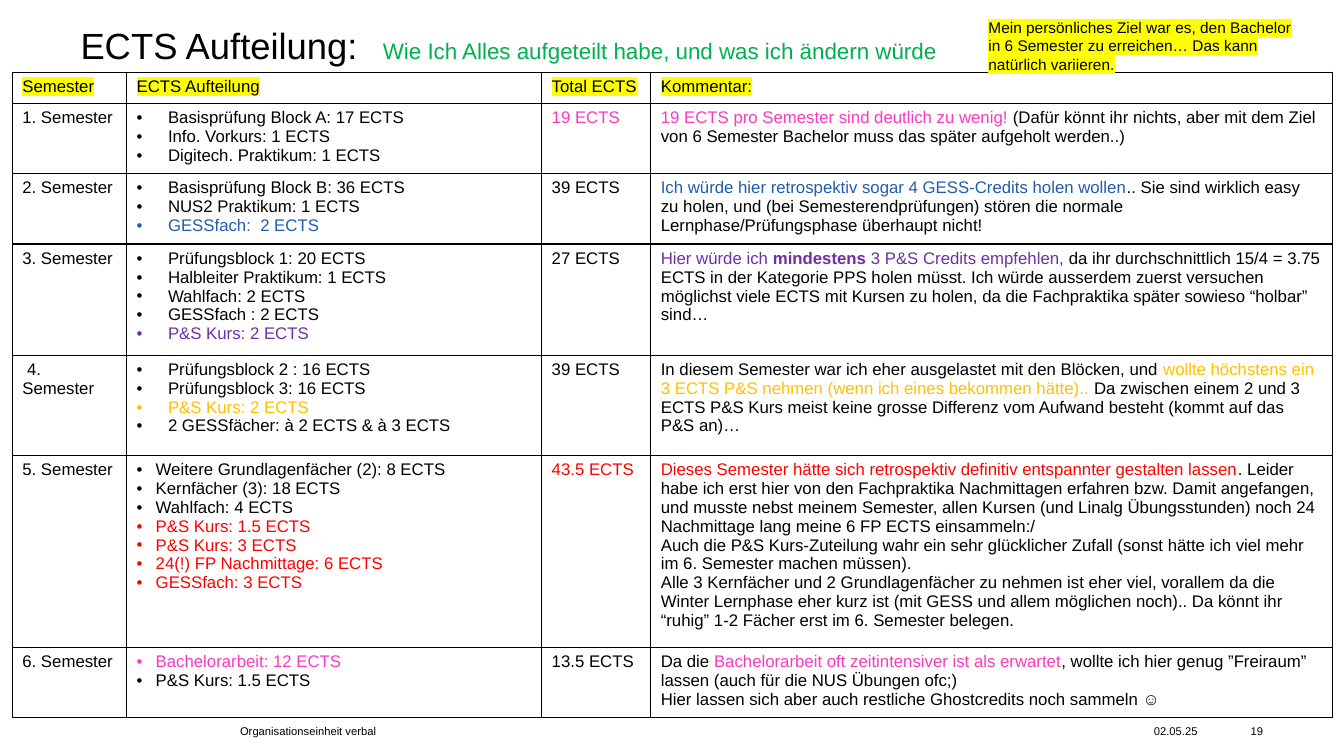
from lxml.etree import SubElement
from pptx import Presentation
from pptx.dml.color import RGBColor
from pptx.enum.text import MSO_ANCHOR, MSO_AUTO_SIZE, PP_ALIGN
from pptx.oxml import parse_xml
from pptx.oxml.ns import nsdecls, qn
from pptx.util import Cm, Pt

BLACK, YELLOW, GREEN = "000000", "FFFF00", "00B050"
PINK, BLUE, PURPLE = "F73BBE", "215CAF", "7030A0"
GOLD, RED = "FFC000", "FF0000"


def add_run(paragraph, text, size, color=BLACK, bold=False, highlight=None):
    run = paragraph.add_run()
    run.text = text
    run.font.size = Pt(size)
    run.font.name = "Arial"
    run.font.bold = bold
    run.font.color.rgb = RGBColor.from_string(color)
    if highlight:
        fill = run.font.fill._xPr.find(qn("a:solidFill"))
        fill.addnext(parse_xml(
            f'<a:highlight {nsdecls("a")}><a:srgbClr val="{highlight}"/></a:highlight>'))


def add_box(left, top, width, height, margin=0):
    box = slide.shapes.add_textbox(Cm(left), Cm(top), Cm(width), Cm(height))
    frame = box.text_frame
    frame.word_wrap = True
    if margin == 0:
        frame.margin_left = frame.margin_right = 0
        frame.margin_top = frame.margin_bottom = 0
    return frame


presentation = Presentation()
presentation.slide_width = Cm(33.87)
presentation.slide_height = Cm(19.05)
slide = presentation.slides.add_slide(presentation.slide_layouts[6])

# Table content: semester, (bullet indent, courses), total, comment paragraphs
headings = ["Semester", "ECTS Aufteilung", "Total ECTS", "Kommentar:"]
WIDE, NARROW = 0.79, 0.48
semesters = [
    ("1. Semester", WIDE,
     [("Basisprüfung Block A: 17 ECTS",), ("Info. Vorkurs: 1 ECTS",),
      ("Digitech. Praktikum: 1 ECTS",)],
     ("19 ECTS", PINK),
     [[("19 ECTS pro Semester sind deutlich zu wenig! ", PINK),
       ("(Dafür könnt ihr nichts, aber mit dem Ziel von 6 Semester Bachelor muss "
        "das später aufgeholt werden..)",)]]),
    ("2. Semester", WIDE,
     [("Basisprüfung Block B: 36 ECTS",), ("NUS2 Praktikum: 1 ECTS",),
      ("GESSfach:  2 ECTS", BLUE)],
     ("39 ECTS",),
     [[("Ich würde hier retrospektiv sogar 4 GESS-Credits holen wollen", BLUE),
       (".. Sie sind wirklich easy zu holen, und (bei Semesterendprüfungen) stören "
        "die normale Lernphase/Prüfungsphase überhaupt nicht!",)]]),
    ("3. Semester", WIDE,
     [("Prüfungsblock 1: 20 ECTS",), ("Halbleiter Praktikum: 1 ECTS",),
      ("Wahlfach: 2 ECTS",), ("GESSfach : 2 ECTS",), ("P&S Kurs: 2 ECTS", PURPLE)],
     ("27 ECTS",),
     [[("Hier würde ich ", PURPLE), ("mindestens ", PURPLE, True),
       ("3 P&S Credits empfehlen, ", PURPLE),
       ("da ihr durchschnittlich 15/4 = 3.75 ECTS in der Kategorie PPS holen müsst. "
        "Ich würde ausserdem zuerst versuchen möglichst viele ECTS mit Kursen zu "
        "holen, da die Fachpraktika später sowieso “holbar” sind…",)]]),
    (" 4. Semester", WIDE,
     [("Prüfungsblock 2 : 16 ECTS",), ("Prüfungsblock 3: 16 ECTS",),
      ("P&S Kurs: 2 ECTS", GOLD), ("2 GESSfächer: à 2 ECTS & à 3 ECTS",)],
     ("39 ECTS",),
     [[("In diesem Semester war ich eher ausgelastet mit den Blöcken, und ",),
       ("wollte höchstens ein 3 ECTS P&S nehmen (wenn ich eines bekommen hätte).. ",
        GOLD),
       ("Da zwischen einem 2 und 3 ECTS P&S Kurs meist keine grosse Differenz vom "
        "Aufwand besteht (kommt auf das P&S an)…",)]]),
    ("5. Semester", NARROW,
     [("Weitere Grundlagenfächer (2): 8 ECTS",), ("Kernfächer (3): 18 ECTS",),
      ("Wahlfach: 4 ECTS",), ("P&S Kurs: 1.5 ECTS", RED), ("P&S Kurs: 3 ECTS", RED),
      ("24(!) FP Nachmittage: 6 ECTS", RED), ("GESSfach: 3 ECTS", RED)],
     ("43.5 ECTS", RED),
     [[("Dieses Semester hätte sich retrospektiv definitiv entspannter gestalten "
        "lassen", RED),
       (". Leider habe ich erst hier von den Fachpraktika Nachmittagen erfahren bzw. "
        "Damit angefangen, und musste nebst meinem Semester, allen Kursen (und Linalg "
        "Übungsstunden) noch 24 Nachmittage lang meine 6 FP ECTS einsammeln:/",)],
      [("Auch die P&S Kurs-Zuteilung wahr ein sehr glücklicher Zufall (sonst hätte "
        "ich viel mehr im 6. Semester machen müssen).",)],
      [("Alle 3 Kernfächer und 2 Grundlagenfächer zu nehmen ist eher viel, vorallem "
        "da die Winter Lernphase eher kurz ist (mit GESS und allem möglichen noch).. "
        "Da könnt ihr “ruhig” 1-2 Fächer erst im 6. Semester belegen.",)]]),
    ("6. Semester", NARROW,
     [("Bachelorarbeit: 12 ECTS", PINK), ("P&S Kurs: 1.5 ECTS",)],
     ("13.5 ECTS",),
     [[("Da die ",), ("Bachelorarbeit oft zeitintensiver ist als erwartet", PINK),
       (", wollte ich hier genug ”Freiraum” lassen (auch für die NUS Übungen ofc;)",)],
      [("Hier lassen sich aber auch restliche Ghostcredits noch sammeln ☺",)]]),
]

# Table grid
column_widths = [2.88, 10.46, 2.75, 17.17]
row_heights = [0.78, 1.77, 1.78, 2.8, 2.53, 4.84, 1.77]
plan = slide.shapes.add_table(
    len(row_heights), len(column_widths), Cm(0.31), Cm(1.82),
    Cm(sum(column_widths)), Cm(sum(row_heights))).table
plan.first_row = plan.horz_banding = False
for column, width in zip(plan.columns, column_widths):
    column.width = Cm(width)
for row, height in zip(plan.rows, row_heights):
    row.height = Cm(height)

# Clear cells with thin black borders
for cell in plan.iter_cells():
    cell.fill.background()
    properties = cell._tc.get_or_add_tcPr()
    for position, side in enumerate(("lnL", "lnR", "lnT", "lnB")):
        properties.insert(position, parse_xml(
            f'<a:{side} {nsdecls("a")} w="12700"><a:solidFill>'
            f'<a:srgbClr val="{BLACK}"/></a:solidFill></a:{side}>'))

# Header row
for column, heading in enumerate(headings):
    add_run(plan.cell(0, column).text_frame.paragraphs[0], heading, 12,
            highlight=YELLOW)

# Semester rows
for row, (semester, indent, courses, total, comment) in enumerate(semesters, 1):
    contents = [[[(semester,)]], [[course] for course in courses], [[total]], comment]
    for column, paragraphs in enumerate(contents):
        frame = plan.cell(row, column).text_frame
        for index, runs in enumerate(paragraphs):
            paragraph = frame.add_paragraph() if index else frame.paragraphs[0]
            if column == 1:
                layout = paragraph._p.get_or_add_pPr()
                layout.set("marL", str(Cm(indent)))
                layout.set("indent", str(-Cm(indent)))
                SubElement(layout, qn("a:buFont"), typeface="Arial")
                SubElement(layout, qn("a:buChar"), char="•")
            for run in runs:
                add_run(paragraph, run[0], 12, *run[1:])

# Footer: date, organisation, page number
for text, left, width, alignment in [
        ("02.05.25", 29.08, 1.7, PP_ALIGN.LEFT),
        ("Organisationseinheit verbal", 6.05, 15.01, PP_ALIGN.LEFT),
        ("19", 30.94, 0.89, PP_ALIGN.RIGHT)]:
    footer = add_box(left, 18.11, width, 0.61)
    footer.vertical_anchor = MSO_ANCHOR.MIDDLE
    footer.paragraphs[0].alignment = alignment
    add_run(footer.paragraphs[0], text, 8)

# Title
title = add_box(2.03, 0.71, 29.79, 2.49).paragraphs[0]
title.line_spacing = 0.9
add_run(title, "ECTS Aufteilung:\t", 26)
add_run(title, "Wie Ich Alles aufgeteilt habe, und was ich ändern würde", 16, GREEN)

# Personal goal
goal = add_box(24.66, 0.33, 8.33, 1.68, margin=None)
goal.auto_size = MSO_AUTO_SIZE.SHAPE_TO_FIT_TEXT
add_run(goal.paragraphs[0],
        "Mein persönliches Ziel war es, den Bachelor in 6 Semester zu erreichen… "
        "Das kann natürlich variieren.", 11, highlight=YELLOW)

presentation.save("out.pptx")
